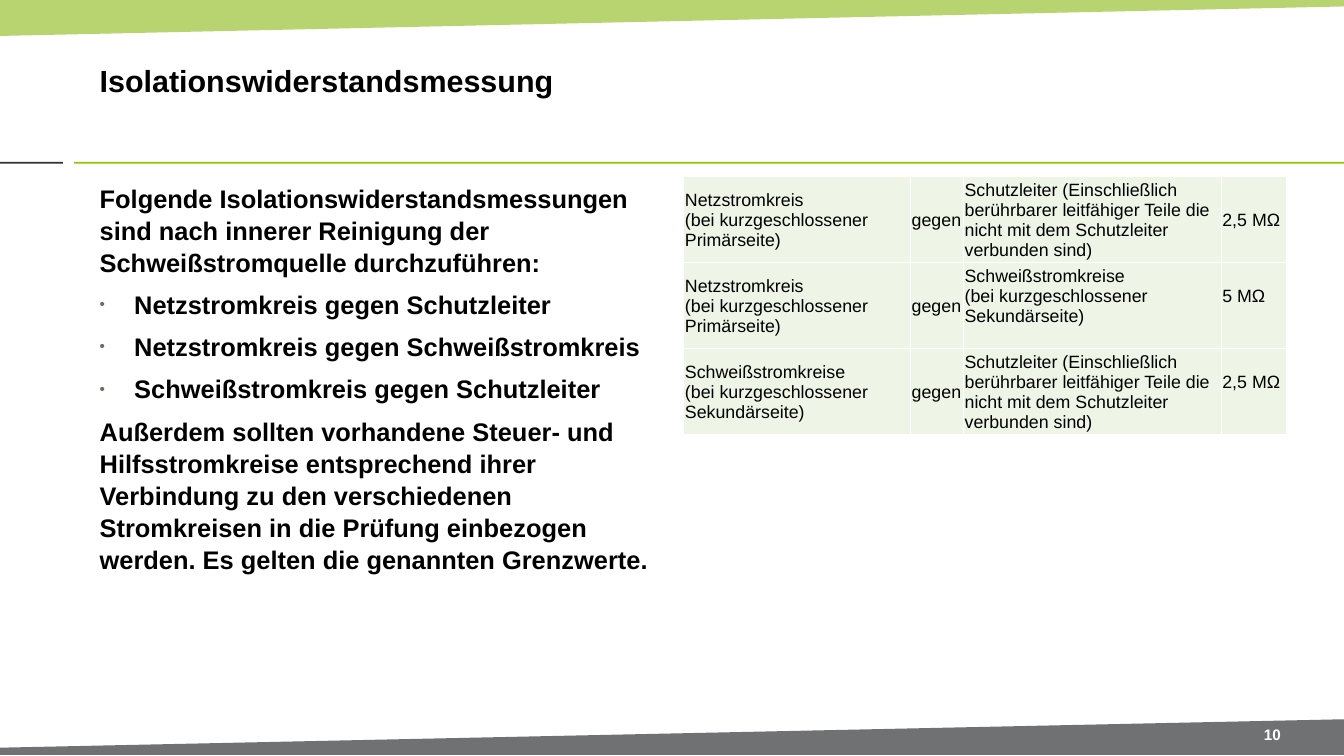
from pptx import Presentation
from pptx.dml.color import RGBColor
from pptx.enum.shapes import MSO_SHAPE as Preset
from pptx.enum.text import MSO_ANCHOR as Anchor, PP_ALIGN as Align
from pptx.oxml import parse_xml
from pptx.oxml.ns import nsdecls, qn
from pptx.util import Cm, Pt
from lxml.etree import SubElement

WIDTH, HEIGHT = 37.34, 21.01
FONT = "Arial"
PRIMARY = "(bei kurzgeschlossener Primärseite)"
SECONDARY = "(bei kurzgeschlossener Sekundärseite)"
EARTH = (
    "Schutzleiter (Einschließlich berührbarer leitfähiger Teile die "
    "nicht mit dem Schutzleiter verbunden sind)"
)
INTRO = (
    "Folgende Isolationswiderstandsmessungen sind nach innerer Reinigung "
    "der Schweißstromquelle durchzuführen:"
)
MEASUREMENTS = [
    "Netzstromkreis gegen Schutzleiter",
    "Netzstromkreis gegen Schweißstromkreis",
    "Schweißstromkreis gegen Schutzleiter",
]
CLOSING = (
    "Außerdem sollten vorhandene Steuer- und Hilfsstromkreise entsprechend "
    "ihrer Verbindung zu den verschiedenen Stromkreisen in die Prüfung "
    "einbezogen werden. Es gelten die genannten Grenzwerte."
)
LIMITS = [
    [["Netzstromkreis", PRIMARY], ["gegen"], [EARTH], ["2,5 MΩ"]],
    [["Netzstromkreis", PRIMARY], ["gegen"], ["Schweißstromkreise", SECONDARY], ["5 MΩ"]],
    [["Schweißstromkreise", SECONDARY], ["gegen"], [EARTH], ["2,5 MΩ"]],
]
RAISED_CELLS = {(1, 2), (1, 3), (2, 3)}
COLUMN_WIDTHS = [6.3, 1.47, 7.16, 1.8]
ROW_HEIGHT = 2.24


def color(value):
    return RGBColor.from_string(value)


def paint(shape, fill):
    shape.shadow.inherit = False
    shape.fill.solid()
    shape.fill.fore_color.rgb = color(fill)
    shape.line.fill.background()


def add_band(slide, points, fill, opacity=100):
    corners = [(Cm(x), Cm(y)) for x, y in points]
    builder = slide.shapes.build_freeform(*corners[0])
    builder.add_line_segments(corners[1:], close=True)
    shape = builder.convert_to_shape()
    paint(shape, fill)
    if opacity < 100:
        fill_color = shape._element.spPr.find(qn("a:solidFill"))[0]
        SubElement(fill_color, qn("a:alpha"), val=str(opacity * 1000))


def add_rule(slide, left, width, fill):
    shape = slide.shapes.add_shape(
        Preset.RECTANGLE, Cm(left), Cm(4.5), Cm(width), Cm(0.05)
    )
    paint(shape, fill)


def add_run(paragraph, text, size, fill="000000", bold=True):
    run = paragraph.add_run()
    run.text = text
    run.font.name = FONT
    run.font.size = Pt(size)
    run.font.bold = bold
    run.font.color.rgb = color(fill)


def add_text_frame(slide, left, top, width, height, anchor=Anchor.MIDDLE):
    box = slide.shapes.add_textbox(Cm(left), Cm(top), Cm(width), Cm(height))
    frame = box.text_frame
    frame.word_wrap = True
    frame.vertical_anchor = anchor
    frame.margin_left = frame.margin_right = Cm(0.28)
    frame.margin_top = frame.margin_bottom = Cm(0.15)
    return frame


def add_bullet(paragraph):
    properties = paragraph._p.get_or_add_pPr()
    properties.set("marL", str(Cm(0.96)))
    properties.set("indent", str(Cm(-0.96)))
    bullet_color = SubElement(properties, qn("a:buClr"))
    SubElement(bullet_color, qn("a:srgbClr"), val="71685A")
    SubElement(properties, qn("a:buSzPct"), val="60000")
    SubElement(properties, qn("a:buFont"), typeface=FONT)
    SubElement(properties, qn("a:buChar"), char="•")


def add_body(slide):
    frame = add_text_frame(slide, 2.49, 4.9, 16.18, 13.77, Anchor.TOP)
    for index, text in enumerate([INTRO, *MEASUREMENTS, CLOSING]):
        paragraph = frame.paragraphs[0] if index == 0 else frame.add_paragraph()
        if text in MEASUREMENTS:
            add_bullet(paragraph)
        paragraph.line_spacing = 1.05
        paragraph.space_before = Pt(8 if index else 0)
        add_run(paragraph, text, 20)


def add_borders(cell):
    properties = cell._tc.get_or_add_tcPr()
    for side in ("lnL", "lnR", "lnT", "lnB"):
        properties.append(parse_xml(
            f'<a:{side} {nsdecls("a")} w="{Pt(1)}"><a:solidFill>'
            f'<a:srgbClr val="FFFFFF"/></a:solidFill></a:{side}>'
        ))


def fill_cell(cell, lines, raised):
    cell.margin_left = cell.margin_right = cell.margin_top = Cm(0.03)
    cell.margin_bottom = Cm(0.57 if raised else 0)
    cell.vertical_anchor = Anchor.MIDDLE
    add_borders(cell)
    cell.fill.solid()
    cell.fill.fore_color.rgb = color("EEF5E7")
    for index, text in enumerate(lines):
        frame = cell.text_frame
        paragraph = frame.paragraphs[0] if index == 0 else frame.add_paragraph()
        add_run(paragraph, text, 14, bold=False)


def add_limits_table(slide):
    table = slide.shapes.add_table(
        len(LIMITS), len(COLUMN_WIDTHS), Cm(19), Cm(4.9),
        Cm(sum(COLUMN_WIDTHS)), Cm(ROW_HEIGHT * len(LIMITS)),
    ).table
    table.first_row = False
    table.horz_banding = False
    for column, width in zip(table.columns, COLUMN_WIDTHS):
        column.width = Cm(width)
    for row_index, row in enumerate(LIMITS):
        table.rows[row_index].height = Cm(ROW_HEIGHT)
        for column_index, lines in enumerate(row):
            position = (row_index, column_index)
            fill_cell(table.cell(*position), lines, position in RAISED_CELLS)


def main():
    presentation = Presentation()
    presentation.slide_width = Cm(WIDTH)
    presentation.slide_height = Cm(HEIGHT)
    slide = presentation.slides.add_slide(presentation.slide_layouts[6])

    add_band(slide, [(0, 0), (WIDTH, 0), (WIDTH, 0.18), (0, 1)], "95C02A", 67)
    add_rule(slide, 0, 1.75, "313130")
    add_rule(slide, 2.06, WIDTH - 2.06, "94C600")
    add_band(
        slide,
        [(WIDTH, 20.98), (0, 20.98), (0, 20.78), (WIDTH, 19.99)],
        "707173",
    )

    number = add_text_frame(slide, 34.26, 20.04, 2.18, 0.74).paragraphs[0]
    number.alignment = Align.CENTER
    add_run(number, "10", 12, "FFFFFF")

    add_body(slide)
    add_limits_table(slide)
    title = add_text_frame(slide, 2.49, 0.71, 29.31, 3.02).paragraphs[0]
    add_run(title, "Isolationswiderstandsmessung", 24)

    presentation.save("out.pptx")


if __name__ == "__main__":
    main()
